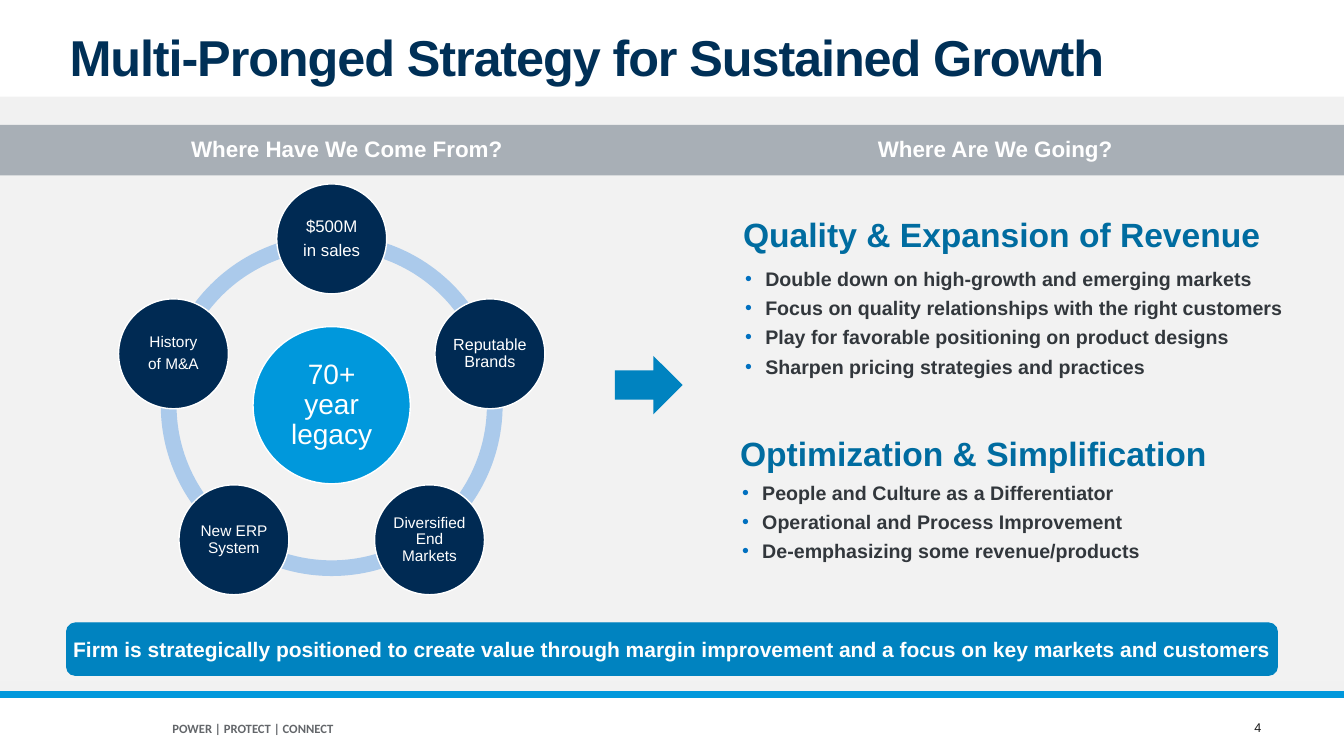
import math

import lxml.etree
import pptx
import pptx.dml.color
import pptx.enum.shapes
import pptx.enum.text
import pptx.oxml
import pptx.oxml.ns
import pptx.util

Inches, Pt = pptx.util.Inches, pptx.util.Pt
SHAPE = pptx.enum.shapes.MSO_SHAPE
ALIGN = pptx.enum.text.PP_ALIGN
ANCHOR = pptx.enum.text.MSO_ANCHOR
qn = pptx.oxml.ns.qn

NAVY, NODE, BLUE, SKY = "003057", "002A53", "0083C0", "0098DC"
HEADING, BODY, BULLET, RING = "006CA0", "32373C", "0070C0", "ABCAEB"
WHITE, BAND = "FFFFFF", "A8AFB6"


def rgb(value):
    return pptx.dml.color.RGBColor.from_string(value)


def add_bullet(p, color):
    pPr = p._p.get_or_add_pPr()
    pPr.set("marL", str(Inches(0.2)))
    pPr.set("indent", str(-Inches(0.2)))
    bu_clr = lxml.etree.SubElement(pPr, qn("a:buClr"))
    lxml.etree.SubElement(bu_clr, qn("a:srgbClr")).set("val", color)
    lxml.etree.SubElement(pPr, qn("a:buFont")).set("typeface", "Arial")
    lxml.etree.SubElement(pPr, qn("a:buChar")).set("char", "•")


def write(sp, *lines, size, color=WHITE, bold=False, font="Arial", align=ALIGN.LEFT,
          anchor=ANCHOR.TOP, inset=(0.03, 0.03), wrap=True, line=1.0, gap=0,
          bullet=None, spacing=None):
    """Write one paragraph per line; gap is the space in points between them."""
    tf = sp.text_frame
    tf.auto_size = pptx.enum.text.MSO_AUTO_SIZE.NONE
    tf.word_wrap = wrap
    tf.vertical_anchor = anchor
    tf.margin_left = tf.margin_right = Inches(inset[0])
    tf.margin_top = tf.margin_bottom = Inches(inset[1])
    for i, text in enumerate(lines):
        p = tf.add_paragraph() if i else tf.paragraphs[0]
        if bullet:
            add_bullet(p, bullet)
        p.alignment = align
        p.line_spacing = line
        p.space_before = Pt(gap if i else 0)
        r = p.add_run()
        r.text = text
        r.font.name, r.font.size, r.font.bold = font, Pt(size), bold
        r.font.color.rgb = rgb(color)
        if spacing:
            r.font._element.set("spc", str(spacing))


class Deck:
    def __init__(self):
        self.prs = pptx.Presentation()
        self.prs.slide_width, self.prs.slide_height = Inches(13.33), Inches(7.5)
        self.s = self.prs.slides.add_slide(self.prs.slide_layouts[3])

    def shape(self, kind, x, y, w, h, fill, line=None, width=1):
        sp = self.s.shapes.add_shape(kind, Inches(x), Inches(y), Inches(w), Inches(h))
        sp.shadow.inherit = False
        sp.fill.solid()
        sp.fill.fore_color.rgb = rgb(fill)
        if line:
            sp.line.color.rgb = rgb(line)
            sp.line.width = Pt(width)
        else:
            sp.line.fill.background()
        return sp

    def text(self, x, y, w, h, *lines, **fmt):
        sp = self.s.shapes.add_textbox(Inches(x), Inches(y), Inches(w), Inches(h))
        write(sp, *lines, **fmt)

    def placeholder(self, idx, x, y, w, h, *lines, **fmt):
        """Place, fill and bring to the front a placeholder of the layout."""
        sp = self.s.placeholders[idx]
        sp.left, sp.top, sp.width, sp.height = Inches(x), Inches(y), Inches(w), Inches(h)
        self.s.shapes.element.append(sp.element)
        write(sp, *lines, **fmt)

    def rule(self, x1, x2, y, color, width):
        c = self.s.shapes.add_connector(pptx.enum.shapes.MSO_CONNECTOR.STRAIGHT,
                                        Inches(x1), Inches(y), Inches(x2), Inches(y))
        c.line.color.rgb = rgb(color)
        c.line.width = Pt(width)
        lxml.etree.SubElement(c.element.spPr, qn("a:effectLst"))

    def circle(self, cx, cy, d, fill, *lines, **fmt):
        sp = self.shape(SHAPE.OVAL, cx - d / 2, cy - d / 2, d, d, fill, WHITE)
        write(sp, *lines, align=ALIGN.CENTER, anchor=ANCHOR.MIDDLE, line=0.9, gap=4, **fmt)

    def cycle(self, cx, cy, radius, hub, nodes):
        """Draw a ring of arcs, a hub, and nodes clockwise from the top."""
        step, d = 360 / len(nodes), 3.39
        angles = [270 + i * step for i in range(len(nodes))]
        for angle in angles:
            arc = self.shape(SHAPE.BLOCK_ARC, cx - d / 2, cy - d / 2, d, d, RING)
            # adjustments count 60000ths of a degree in units of 100000
            arc.adjustments[0] = angle % 360 * 0.6
            arc.adjustments[1] = (angle + step) % 360 * 0.6
            arc.adjustments[2] = 0.046
        self.circle(cx, cy, 1.56, SKY, hub, size=20)
        for angle, (size, *lines) in zip(angles, nodes):
            a = math.radians(angle)
            self.circle(cx + radius * math.cos(a), cy + radius * math.sin(a), 1.09, NODE,
                        *lines, size=size, inset=(0.02, 0.02))


def main():
    deck = Deck()
    deck.shape(SHAPE.RECTANGLE, 0, 0.96, 13.33, 5.93, "F1F1F1")
    deck.text(1.71, 7.16, 1.86, 0.14, "POWER | PROTECT | CONNECT", size=9, font="Calibri",
              color="63666A", bold=True, anchor=ANCHOR.MIDDLE, inset=(0, 0))
    deck.text(12.37, 7.11, 0.21, 0.21, "4", size=9, color="191919", wrap=False,
              align=ALIGN.CENTER, anchor=ANCHOR.BOTTOM)
    deck.rule(0, 13.33, 6.89, SKY, 4.5)
    deck.shape(SHAPE.RECTANGLE, 0, 1.25, 13.33, 5.51, "F2F2F2")
    deck.placeholder(0, 0.66, 0.35, 12.01, 0.78, "Multi-Pronged Strategy for Sustained Growth",
                     size=36, color=NAVY, bold=True, line=0.8, spacing=-80)

    deck.shape(SHAPE.RECTANGLE, 0, 1.24, 13.33, 0.5, BAND)
    for x, w, label in ((0.44, 6, "Where Have We Come From?"),
                        (7.21, 5.32, "Where Are We Going?")):
        deck.text(x, 1.29, w, 0.37, label, size=16, bold=True, align=ALIGN.CENTER,
                  anchor=ANCHOR.MIDDLE, inset=(0, 0.05))

    deck.cycle(3.29, 4.02, 1.65, "70+ year legacy", [
        (12, "$500M", "in sales"),
        (11.5, "Reputable Brands"),
        (11, "Diversified End Markets"),
        (11, "New ERP System"),
        (11, "History", "of M&A"),
    ])
    deck.shape(SHAPE.RIGHT_ARROW, 6.1, 3.53, 0.67, 0.58, BLUE)

    goals = [
        (1, 7.34, 2.09, 2.6, 1.5, "Quality & Expansion of Revenue", [
            "Double down on high-growth and emerging markets",
            "Focus on quality relationships with the right customers",
            "Play for favorable positioning on product designs",
            "Sharpen pricing strategies and practices"]),
        (2, 7.31, 4.26, 4.72, 0.92, "Optimization & Simplification", [
            "People and Culture as a Differentiator",
            "Operational and Process Improvement",
            "De-emphasizing some revenue/products"]),
    ]
    for idx, x, y, list_y, list_h, heading, items in goals:
        deck.text(x, y, 5.19, 0.61, heading, size=24, color=HEADING, bold=True)
        deck.placeholder(idx, x, list_y, 5.66, list_h, *items, size=14, color=BODY, bold=True,
                         gap=4, bullet=BULLET, inset=(0.05, 0.05))

    banner = deck.shape(SHAPE.ROUNDED_RECTANGLE, 0.66, 6.18, 12.01, 0.52, BLUE, BLUE, 0.75)
    write(banner, "Firm is strategically positioned to create value through margin improvement "
          "and a focus on key markets and customers", size=15, bold=True,
          align=ALIGN.CENTER, anchor=ANCHOR.MIDDLE)
    deck.prs.save("out.pptx")


if __name__ == "__main__":
    main()
